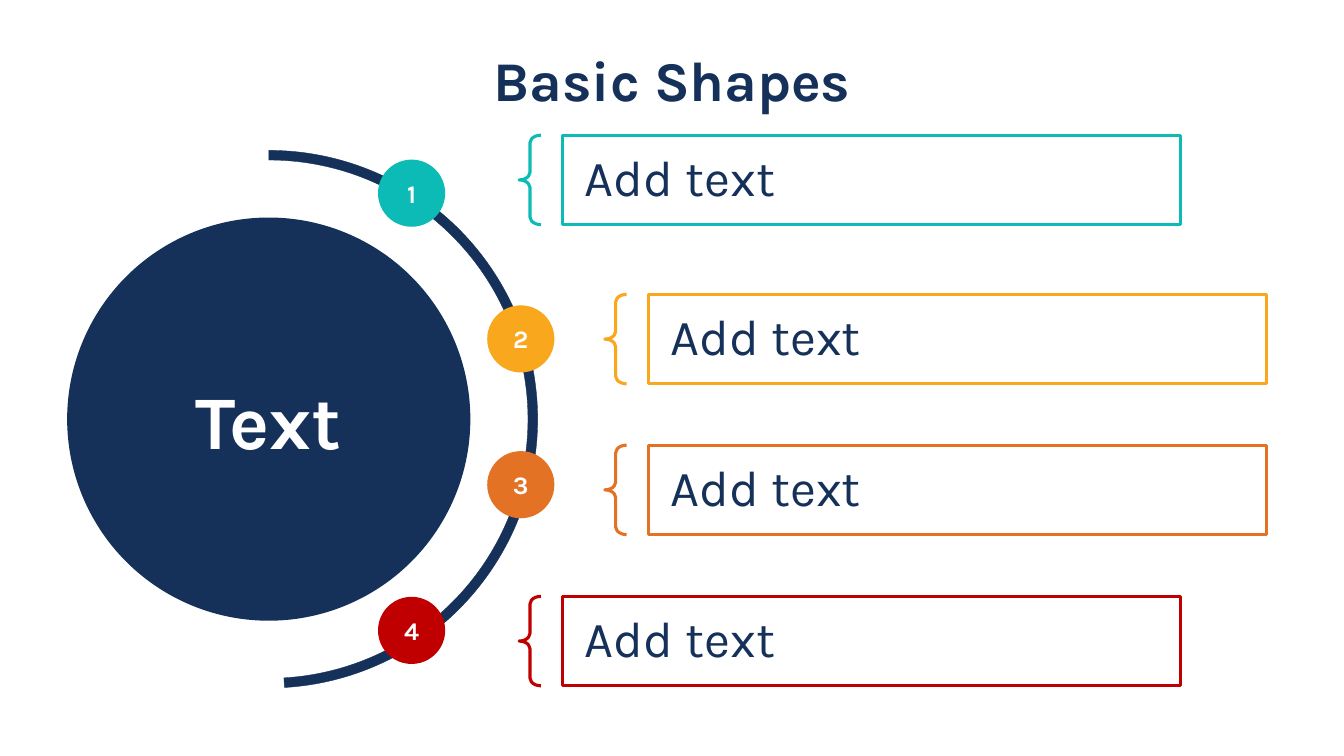
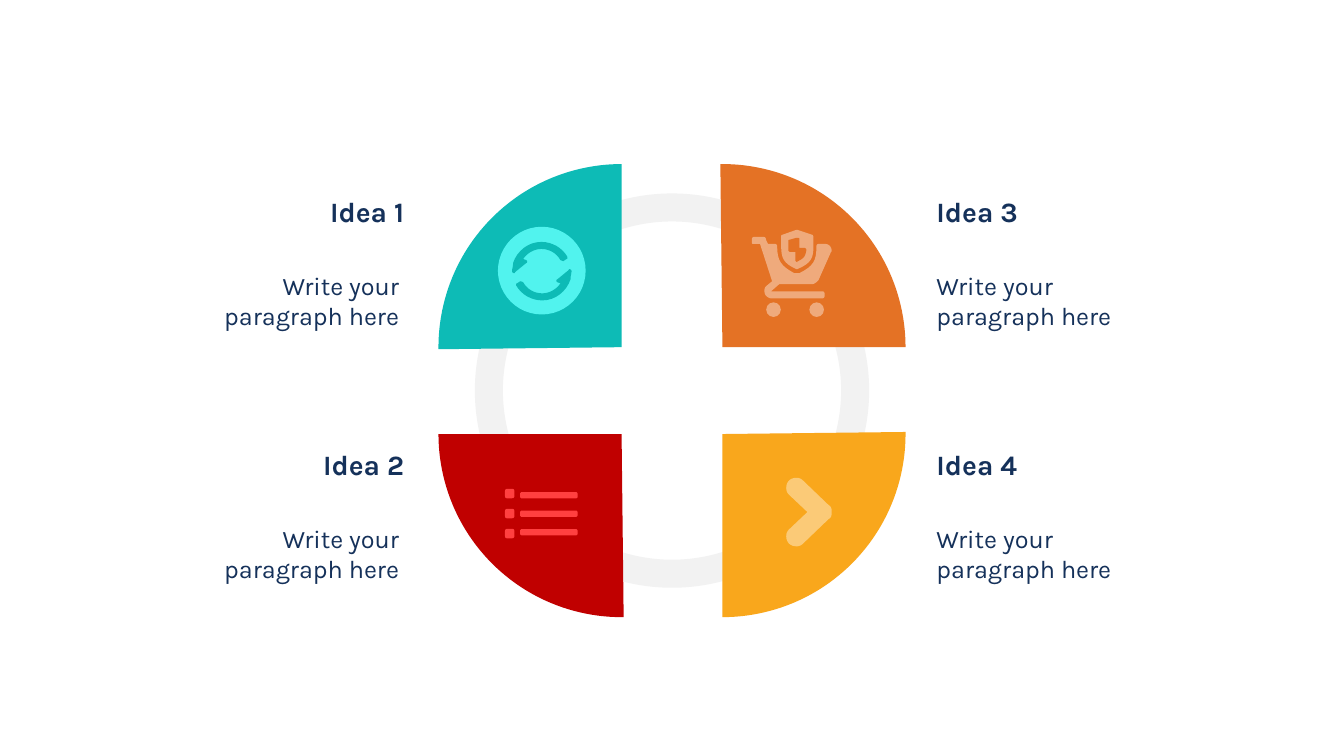
import pptx
import pptx.dml.color
import pptx.enum.shapes
import pptx.enum.text
import pptx.util

SHAPE = pptx.enum.shapes.MSO_SHAPE
ALIGN = pptx.enum.text.PP_ALIGN
ANCHOR = pptx.enum.text.MSO_ANCHOR

COLUMNS, ROWS = 160, 90
CELL = pptx.util.Inches(7.5) // ROWS
ICON_UNIT = 0.12  # cells per unit of an icon outline
CURVE_STEPS = 8

NAVY, WHITE, PALE_GRAY = "15315A", "FFFFFF", "F2F2F2"
TEAL, YELLOW, ORANGE, RED = "0DBBB6", "F9A71C", "E47225", "C00000"
LIGHT_TEAL, LIGHT_YELLOW, LIGHT_ORANGE, LIGHT_RED = "51F3EE", "FBCA77", "EFAA7C", "FF4040"

SYNC_ARROW = """M 17 45 C 17 45 17 46 16 46 C 15 46 14 45 14 44 C 14 42 15 40 15 36
    C 19 24 30 15 43 15 C 54 15 64 21 69 30 C 69 31 69 32 68 32 L 65 34
    C 65 34 64 34 62 33 C 58 26 51 22 43 22 C 36 22 29 26 25 32 L 28 33
    C 28 33 29 34 29 34 C 29 35 29 36 28 36"""
CART = """M 73 14 L 66 14 C 65 14 64 15 64 16 C 64 31 61 36 47 43 C 46 43 44 43 42 43
    C 29 36 25 31 25 16 C 25 15 24 14 23 14 L 16 14 L 14 10 C 14 8 13 7 11 7 L 2 7
    C 1 7 0 8 0 9 L 0 13 C 0 14 1 14 2 14 L 8 14 L 20 51 L 14 56 C 12 58 12 61 13 64
    C 14 66 17 68 19 68 L 70 68 C 71 68 72 67 72 66 L 72 63 C 72 62 71 61 70 61
    L 19 61 L 27 54 L 59 54 C 62 54 64 52 66 50 L 78 23 C 78 22 79 22 79 21
    L 79 20 C 79 17 76 14 73 14"""
SHIELD = """M 44 39 L 45 39 C 59 33 61 28 61 16 L 61 7 C 61 6 60 5 60 5 L 45 0 L 44 0
    L 30 5 C 29 5 29 6 29 7 L 29 16 C 29 28 31 33 44 39"""
SHIELD_MARK = """M 36 12 C 36 11 36 10 37 10 L 44 8 C 46 8 47 8 47 9 L 47 18 L 52 18
    C 53 18 54 19 54 20 C 53 26 52 28 46 31 C 45 31 45 32 45 32 C 44 32 43 31 43 30
    L 43 22 L 38 22 C 37 22 36 21 36 20"""
CHEVRON = """M 21 34 L 3 51 C 1 53 0 55 0 58 C 0 64 4 68 10 68 C 13 68 15 67 17 65
    L 42 41 C 44 40 45 38 45 36 L 45 32 C 45 30 44 28 42 27 L 17 3 C 15 1 13 0 10 0
    C 4 0 0 4 0 10 C 0 13 1 15 3 17"""


def rgb(color):
    return pptx.dml.color.RGBColor.from_string(color)


def cells(*lengths):
    return [round(length * CELL) for length in lengths]


def angle(degrees):
    """Degrees as a python-pptx adjustment value."""
    return degrees * 0.6


def outline_points(outline):
    """Turn M, L and C commands into points, sampling each curve."""
    points, tokens = [], iter(outline.split())
    for command in tokens:
        count = 3 if command == "C" else 1
        ends = [(float(next(tokens)), float(next(tokens))) for _ in range(count)]
        if command != "C":
            points += ends
            continue
        controls = [points[-1]] + ends
        for step in range(1, CURVE_STEPS + 1):
            t = step / CURVE_STEPS
            weights = ((1 - t) ** 3, 3 * t * (1 - t) ** 2, 3 * t * t * (1 - t), t ** 3)
            points.append(tuple(sum(w * c[axis] for w, c in zip(weights, controls))
                                for axis in (0, 1)))
    return points


class Deck:
    """The shared style and the current slide; lengths are grid cells."""
    font = "Karla"

    def __init__(self):
        self.prs = pptx.Presentation()
        self.prs.slide_width, self.prs.slide_height = cells(COLUMNS, ROWS)

    def new_slide(self):
        self.s = self.prs.slides.add_slide(self.prs.slide_layouts[6])
        self.s.background.fill.solid()
        self.s.background.fill.fore_color.rgb = rgb(WHITE)

    def paint(self, sp, fill=None, line=None, weight=0.25):
        sp.shadow.inherit = False
        if fill:
            sp.fill.solid()
            sp.fill.fore_color.rgb = rgb(fill)
        else:
            sp.fill.background()
        if line:
            sp.line.color.rgb = rgb(line)
            sp.line.width = pptx.util.Pt(weight)
        else:
            sp.line.fill.background()

    def shape(self, kind, x, y, w, h, adjust=(), rotation=0, **paint):
        sp = self.s.shapes.add_shape(kind, *cells(x, y, w, h))
        for i, value in enumerate(adjust):
            sp.adjustments[i] = value
        sp.rotation = rotation
        self.paint(sp, **paint)
        return sp

    def label(self, sp, text, size, color=NAVY, bold=False, align=ALIGN.CENTER,
              anchor=ANCHOR.MIDDLE, inset=None, spacing=None):
        tf = sp.text_frame
        tf.word_wrap = True
        tf.vertical_anchor = anchor
        if inset is not None:
            tf.margin_left = tf.margin_right = tf.margin_top = tf.margin_bottom = cells(inset)[0]
        tf.text = text
        p = tf.paragraphs[0]
        p.alignment = align
        p.line_spacing = spacing
        font = p.runs[0].font
        font.name, font.size, font.bold = self.font, pptx.util.Pt(size), bold
        font.color.rgb = rgb(color)
        return p

    def text(self, text, x, y, w, h, size, **style):
        sp = self.s.shapes.add_textbox(*cells(x, y, w, h))
        self.label(sp, text, size, **style)

    def title(self, text):
        self.text(text, 11, 3, 138, 13.8, 40, bold=True, spacing=0.9)

    def badge(self, text, x, y, color):
        sp = self.shape(SHAPE.OVAL, x, y, 8, 8, fill=color)
        self.label(sp, text, 18, color=WHITE, bold=True, inset=0)

    def braced_box(self, text, x, y, color):
        h = 10.65
        self.shape(SHAPE.LEFT_BRACE, x, y, 2.6, h, (0.35, 0.5), line=color, weight=2.25)
        box = self.shape(SHAPE.RECTANGLE, x + 5.16, y, 73.6, h, line=color, weight=2.25)
        p = self.label(box, text, 36, align=ALIGN.LEFT, inset=1.2, spacing=0.9)
        p._p.get_or_add_pPr().set("marL", str(cells(1.5)[0]))

    def idea(self, heading, body, left, y):
        """A heading over a paragraph, against the left or right of the ring."""
        style = dict(align=ALIGN.RIGHT if left else ALIGN.LEFT, anchor=ANCHOR.TOP)
        self.text(heading, 5.7 if left else 110.3, y, 43.6, 5.3, 20, bold=True, **style)
        self.text(body, 24 if left else 110.3, y + 9, 24.7 if left else 25.8, 8.5, 18, **style)

    def outline(self, outline, x, y, color, rotation=0):
        points = [cells(x + px * ICON_UNIT, y + py * ICON_UNIT)
                  for px, py in outline_points(outline)]
        builder = self.s.shapes.build_freeform(*points[0])
        builder.add_line_segments(points[1:], close=True)
        sp = builder.convert_to_shape()
        sp.rotation = rotation
        self.paint(sp, fill=color)

    def sync_icon(self, x, y):
        self.shape(SHAPE.OVAL, x, y, 10.44, 10.44, fill=LIGHT_TEAL)
        self.outline(SYNC_ARROW, x, y, TEAL)
        self.outline(SYNC_ARROW, x + 4 * ICON_UNIT, y + 27 * ICON_UNIT, TEAL, rotation=180)

    def cart_icon(self, x, y):
        for outline, color in ((CART, LIGHT_ORANGE), (SHIELD, LIGHT_ORANGE), (SHIELD_MARK, ORANGE)):
            self.outline(outline, x, y, color)
        for wheel in (1.7, 6.84):
            self.shape(SHAPE.OVAL, x + wheel, y + 8.64, 1.74, 1.74, fill=LIGHT_ORANGE)

    def list_icon(self, x, y):
        for row in range(3):
            self.shape(SHAPE.ROUNDED_RECTANGLE, x, y + 2.38 * row, 1.12, 1.12,
                       (0.2,), fill=LIGHT_RED)
            self.shape(SHAPE.ROUNDED_RECTANGLE, x + 1.8, y + 0.38 + 2.2 * row, 6.86, 0.76,
                       (0.3,), fill=LIGHT_RED)

    def chevron_icon(self, x, y):
        self.outline(CHEVRON, x, y, LIGHT_YELLOW)


def basic_shapes(deck):
    deck.new_slide()
    deck.title("Basic Shapes")
    middle_x, middle_y, disc, arc = 32, 49.9, 48, 64
    sp = deck.shape(SHAPE.OVAL, middle_x - disc / 2, middle_y - disc / 2, disc, disc, fill=NAVY)
    deck.label(sp, "Text", 54, color=WHITE, bold=True)
    deck.shape(SHAPE.BLOCK_ARC, middle_x - arc / 2, middle_y - arc / 2, arc, arc,
               (angle(180), angle(356.66), 1.15 / arc), rotation=90, fill=NAVY, line=NAVY)
    box_tops = (16.1, 35.05, 53, 71)
    for i, (color, box_top) in enumerate(zip((TEAL, YELLOW, ORANGE, RED), box_tops)):
        inner = i in (1, 2)
        deck.badge(str(i + 1), 58 if inner else 45, 19 + 17.35 * i, color)
        deck.braced_box("Add text", 72 if inner else 61.8, box_top, color)


def four_ideas(deck):
    deck.new_slide()
    middle_x, middle_y, size = 80, 46.5, 43.6
    x, y = middle_x - size / 2, middle_y - size / 2
    deck.shape(SHAPE.OVAL, x, y, size, size, fill=WHITE, line=PALE_GRAY, weight=20)
    quarters = (
        (TEAL, -1, -1, 0, deck.sync_icon, 59.28, 27),
        (RED, -1, 1, 270, deck.list_icon, 60.12, 58.2),
        (ORANGE, 1, -1, 90, deck.cart_icon, 89.52, 27.36),
        (YELLOW, 1, 1, 180, deck.chevron_icon, 93.6, 56.88),
    )
    for i, (color, across, down, rotation, icon, icon_x, icon_y) in enumerate(quarters):
        deck.shape(SHAPE.PIE, x + 6 * across, y + 5.17 * down, size, size,
                   (angle(179.36), angle(270)), rotation=rotation, fill=color)
        icon(icon_x, icon_y)
        deck.idea(f"Idea {i + 1}", "Write your paragraph here", across < 0,
                  22.6 if down < 0 else 52.65)


def main():
    deck = Deck()
    basic_shapes(deck)
    four_ideas(deck)
    deck.prs.save("out.pptx")


if __name__ == "__main__":
    main()
